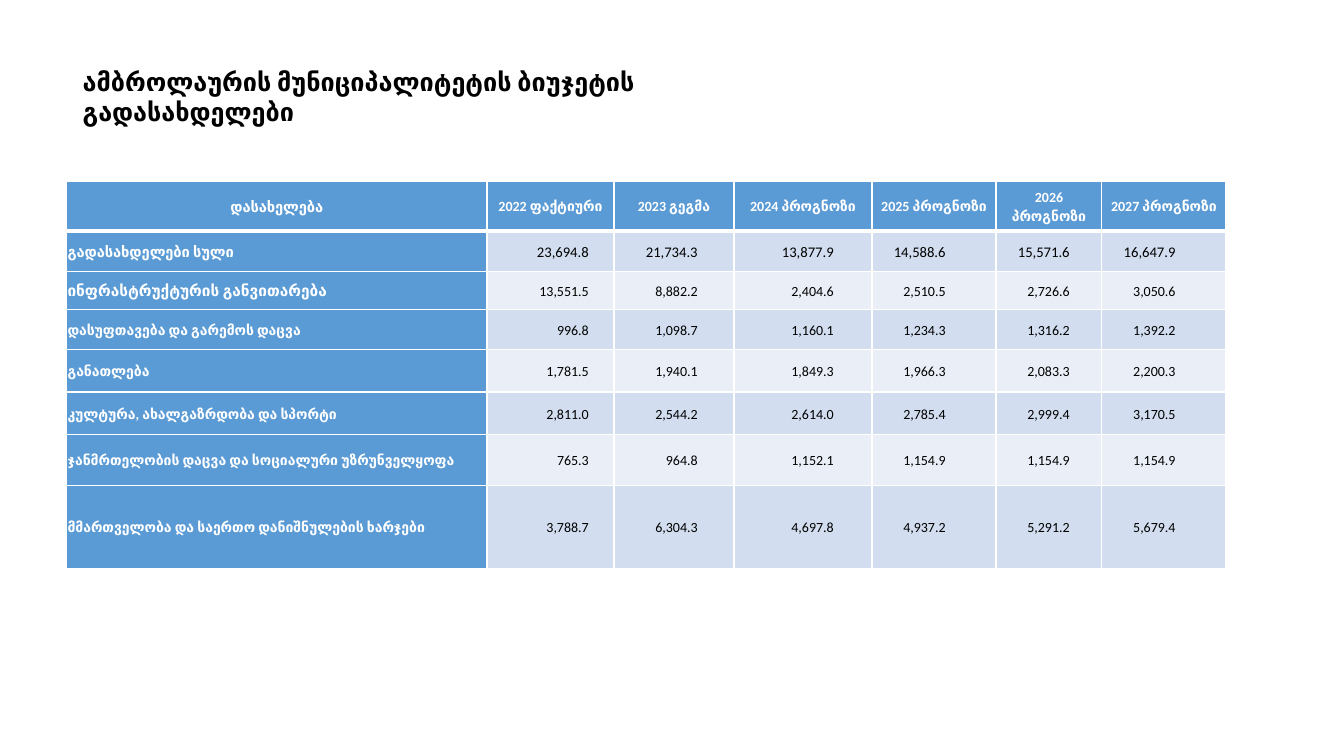
from dataclasses import dataclass

from lxml.etree import SubElement
from pptx import Presentation
from pptx.dml.color import RGBColor
from pptx.enum.text import MSO_ANCHOR as Anchor, MSO_AUTO_SIZE as AutoSize, PP_ALIGN as Align
from pptx.oxml.ns import qn
from pptx.slide import Slide
from pptx.table import _Cell as Cell
from pptx.text.text import _Paragraph as Paragraph
from pptx.util import Inches, Pt

BLACK = RGBColor(0x00, 0x00, 0x00)
WHITE = RGBColor(0xFF, 0xFF, 0xFF)
BLUE = RGBColor(0x5B, 0x9B, 0xD5)
BANDS = (RGBColor(0xD2, 0xDE, 0xEF), RGBColor(0xEA, 0xEF, 0xF7))
FONT = "Calibri"
INSET = 0.01
THIN, THICK = 1, 3


@dataclass(frozen=True)
class Column:
    heading: str
    width: float
    right_inset: float = INSET
    heading_size: float = 10


@dataclass(frozen=True)
class Expense:
    name: str
    height: float
    amounts: tuple[float, ...]
    name_size: float = 10
    amount_size: float = 10


TITLE = "ამბროლაურის მუნიციპალიტეტის ბიუჯეტის გადასახდელები"
HEADER_HEIGHT = 0.49
COLUMNS = (
    Column("დასახელება", 4.17, heading_size=10.5),
    Column("2022 ფაქტიური", 1.26, 0.25),
    Column("2023 გეგმა", 1.19, 0.36),
    Column("2024 პროგნოზი", 1.37, 0.38),
    Column("2025 პროგნოზი", 1.23, 0.5),
    Column("2026 პროგნოზი", 1.05, 0.32),
    Column("2027 პროგნოზი", 1.23, 0.5),
)
EXPENSES = (
    Expense("გადასახდელები სული", 0.4,
            (23694.8, 21734.3, 13877.9, 14588.6, 15571.6, 16647.9), 10.5, 10.5),
    Expense("ინფრასტრუქტურის განვითარება", 0.38,
            (13551.5, 8882.2, 2404.6, 2510.5, 2726.6, 3050.6), 11),
    Expense("დასუფთავება და გარემოს დაცვა", 0.4,
            (996.8, 1098.7, 1160.1, 1234.3, 1316.2, 1392.2)),
    Expense("განათლება", 0.42,
            (1781.5, 1940.1, 1849.3, 1966.3, 2083.3, 2200.3)),
    Expense("კულტურა, ახალგაზრდობა და სპორტი", 0.42,
            (2811.0, 2544.2, 2614.0, 2785.4, 2999.4, 3170.5)),
    Expense("ჯანმრთელობის დაცვა და სოციალური უზრუნველყოფა", 0.51,
            (765.3, 964.8, 1152.1, 1154.9, 1154.9, 1154.9)),
    Expense("მმართველობა და საერთო დანიშნულების ხარჯები", 0.82,
            (3788.7, 6304.3, 4697.8, 4937.2, 5291.2, 5679.4)),
)


def apply(target: object, values: dict[str, object]) -> None:
    """Set each named attribute of the target."""
    for name, value in values.items():
        setattr(target, name, value)


def write(para: Paragraph, text: str, size: float, color: RGBColor, bold: bool) -> None:
    span = para.add_run()
    span.text = text
    apply(span.font, {"name": FONT, "size": Pt(size), "bold": bold})
    span.font.color.rgb = color


def add_borders(cell: Cell, top: float, bottom: float) -> None:
    properties = cell._tc.get_or_add_tcPr()
    for side, width in (("L", THIN), ("R", THIN), ("T", top), ("B", bottom)):
        line = SubElement(properties, qn(f"a:ln{side}"), w=str(Pt(width)))
        fill = SubElement(line, qn("a:solidFill"))
        SubElement(fill, qn("a:srgbClr"), val=str(WHITE))


def fill_cell(cell: Cell, text: str, size: float, fill: RGBColor, align: Align,
              color: RGBColor = WHITE, bold: bool = True, right: float = INSET,
              top: float = THIN, bottom: float = THIN) -> None:
    add_borders(cell, top, bottom)
    cell.fill.solid()
    cell.fill.fore_color.rgb = fill
    apply(cell, {
        "vertical_anchor": Anchor.MIDDLE,
        "margin_left": Inches(INSET),
        "margin_right": Inches(right),
        "margin_top": Inches(INSET),
        "margin_bottom": 0,
    })
    para = cell.text_frame.paragraphs[0]
    apply(para, {"alignment": align, "line_spacing": 1.07})
    write(para, text, size, color, bold)


def add_title(page: Slide) -> None:
    title = page.shapes.title
    apply(title, {"left": Inches(0.72), "top": Inches(0.61),
                  "width": Inches(7.59), "height": Inches(0.4)})
    apply(title.text_frame, {"word_wrap": True, "vertical_anchor": Anchor.TOP,
                             "auto_size": AutoSize.SHAPE_TO_FIT_TEXT})
    para = title.text_frame.paragraphs[0]
    para.alignment = Align.LEFT
    write(para, TITLE, 18, BLACK, True)


def add_expense_table(page: Slide) -> None:
    heights = [HEADER_HEIGHT, *(expense.height for expense in EXPENSES)]
    widths = [column.width for column in COLUMNS]
    table = page.shapes.add_table(
        len(heights), len(widths), Inches(0.66), Inches(1.8),
        Inches(sum(widths)), Inches(sum(heights))).table
    for row, height in zip(table.rows, heights):
        row.height = Inches(height)

    for index, column in enumerate(COLUMNS):
        table.columns[index].width = Inches(column.width)
        fill_cell(table.cell(0, index), column.heading, column.heading_size,
                  BLUE, Align.CENTER, bottom=THICK)

    for row, expense in enumerate(EXPENSES, start=1):
        top = THICK if row == 1 else THIN
        fill_cell(table.cell(row, 0), expense.name, expense.name_size,
                  BLUE, Align.LEFT, top=top)
        band = BANDS[(row - 1) % len(BANDS)]
        for index, amount in enumerate(expense.amounts, start=1):
            fill_cell(table.cell(row, index), f"{amount:,.1f}", expense.amount_size,
                      band, Align.RIGHT, BLACK, False,
                      COLUMNS[index].right_inset, top)


def main() -> None:
    deck = Presentation()
    apply(deck, {"slide_width": Inches(13.33), "slide_height": Inches(7.5)})
    page = deck.slides.add_slide(deck.slide_layouts[5])
    add_title(page)
    add_expense_table(page)
    deck.save("out.pptx")


if __name__ == "__main__":
    main()
